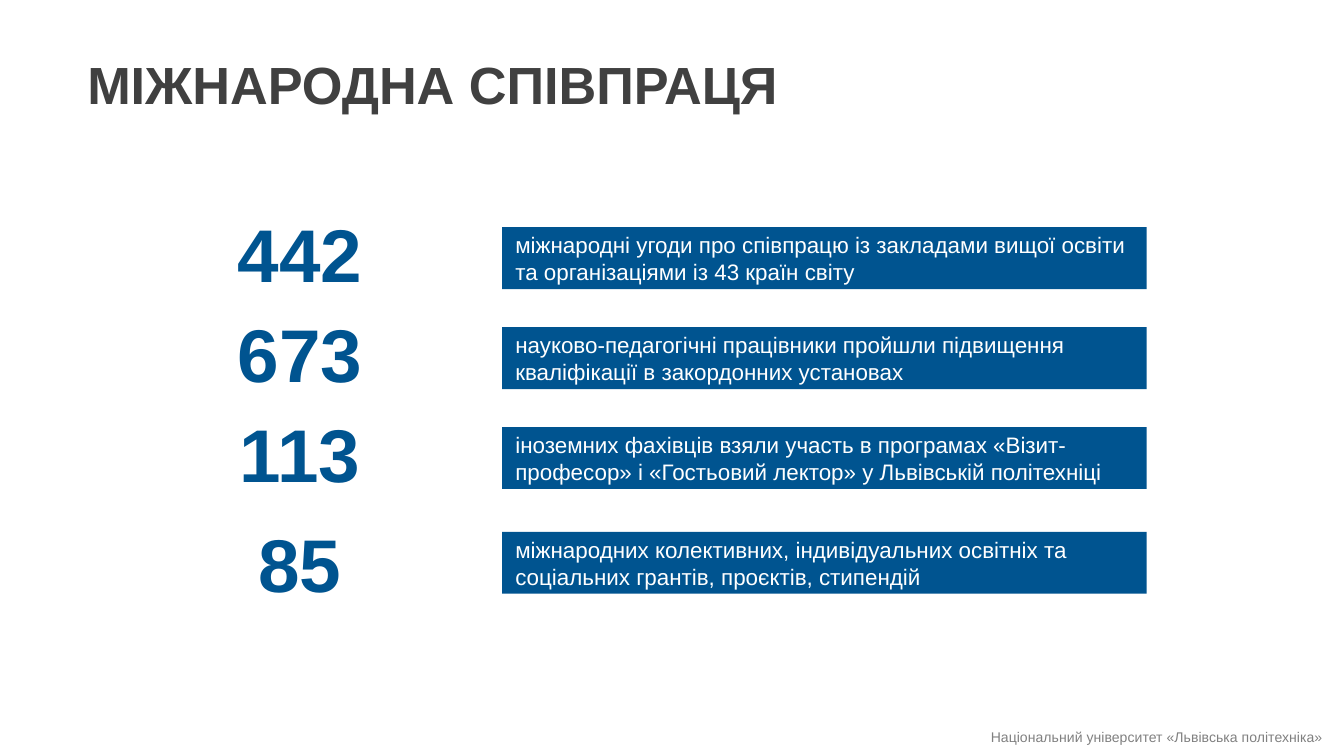
from pptx import Presentation
from pptx.dml.color import RGBColor
from pptx.enum.shapes import MSO_SHAPE
from pptx.enum.text import MSO_ANCHOR, PP_ALIGN
from pptx.util import Cm, Pt

BLUE = RGBColor(0x00, 0x54, 0x90)
DARK = RGBColor(0x40, 0x40, 0x40)
GRAY = RGBColor(0x80, 0x80, 0x80)
WHITE = RGBColor(0xFF, 0xFF, 0xFF)

FIRST_CENTER = 4.88
ROW_STEP = 1.89
LAST_CENTER = 10.64
FACTS = [
    ("442", "міжнародні угоди про співпрацю із закладами вищої освіти та організаціями із 43 країн світу"),
    ("673", "науково-педагогічні працівники пройшли підвищення кваліфікації в закордонних установах"),
    ("113", "іноземних фахівців взяли участь в програмах «Візит-професор» і «Гостьовий лектор» у Львівській політехніці"),
    ("85", "міжнародних колективних, індивідуальних освітніх та соціальних грантів, проєктів, стипендій"),
]


class FactPage:
    font_name = "Arial"

    def __init__(self, deck):
        self.page = deck.slides.add_slide(deck.slide_layouts[6])

    def fill_text(self, frame, text, size, color, bold=False, align=PP_ALIGN.LEFT):
        para = frame.paragraphs[0]
        para.alignment = align
        span = para.add_run()
        span.text = text
        para.font.name = self.font_name
        para.font.size = Pt(size)
        para.font.bold = bold
        para.font.color.rgb = color
        return para

    def label(self, left, top, width, height, wrap=True, anchor=MSO_ANCHOR.TOP):
        box = self.page.shapes.add_textbox(Cm(left), Cm(top), Cm(width), Cm(height))
        frame = box.text_frame
        frame.word_wrap = wrap
        frame.vertical_anchor = anchor
        frame.margin_left = frame.margin_right = Cm(0.1)
        frame.margin_top = frame.margin_bottom = Cm(0.05)
        return frame

    def title(self, text):
        frame = self.label(1.55, 0.94, 13.39, 1.3, wrap=False)
        self.fill_text(frame, text, 28, DARK, bold=True)

    def footer(self, text):
        frame = self.label(16.48, 13.67, 8.61, 0.48)
        para = self.fill_text(frame, text, 13, GRAY, align=PP_ALIGN.RIGHT)
        para.runs[0].font._element.set("baseline", "30000")

    def number(self, text, center, height, spacing):
        frame = self.label(2.57, center - height / 2, 6.2, height, anchor=MSO_ANCHOR.MIDDLE)
        para = self.fill_text(frame, text, 40, BLUE, bold=True, align=PP_ALIGN.CENTER)
        para.line_spacing = spacing

    def bar(self, text, center):
        height = 1.17
        box = self.page.shapes.add_shape(
            MSO_SHAPE.RECTANGLE, Cm(9.49), Cm(center - height / 2), Cm(12.18), Cm(height))
        box.shadow.inherit = False
        box.fill.solid()
        box.fill.fore_color.rgb = BLUE
        box.line.fill.background()
        frame = box.text_frame
        frame.word_wrap = True
        frame.vertical_anchor = MSO_ANCHOR.MIDDLE
        self.fill_text(frame, text, 12, WHITE)


def main():
    deck = Presentation()
    deck.slide_width = Cm(25.4)
    deck.slide_height = Cm(14.29)
    page = FactPage(deck)
    page.footer("Національний університет «Львівська політехніка»")
    page.title("МІЖНАРОДНА СПІВПРАЦЯ")
    for row, (number, text) in enumerate(FACTS):
        is_last = row == len(FACTS) - 1
        center = LAST_CENTER if is_last else FIRST_CENTER + row * ROW_STEP
        page.bar(text, center)
        if is_last:
            page.number(number, center, height=1.8, spacing=1.0)
        else:
            page.number(number, center, height=1.63, spacing=0.9)
    deck.save("out.pptx")


if __name__ == "__main__":
    main()
